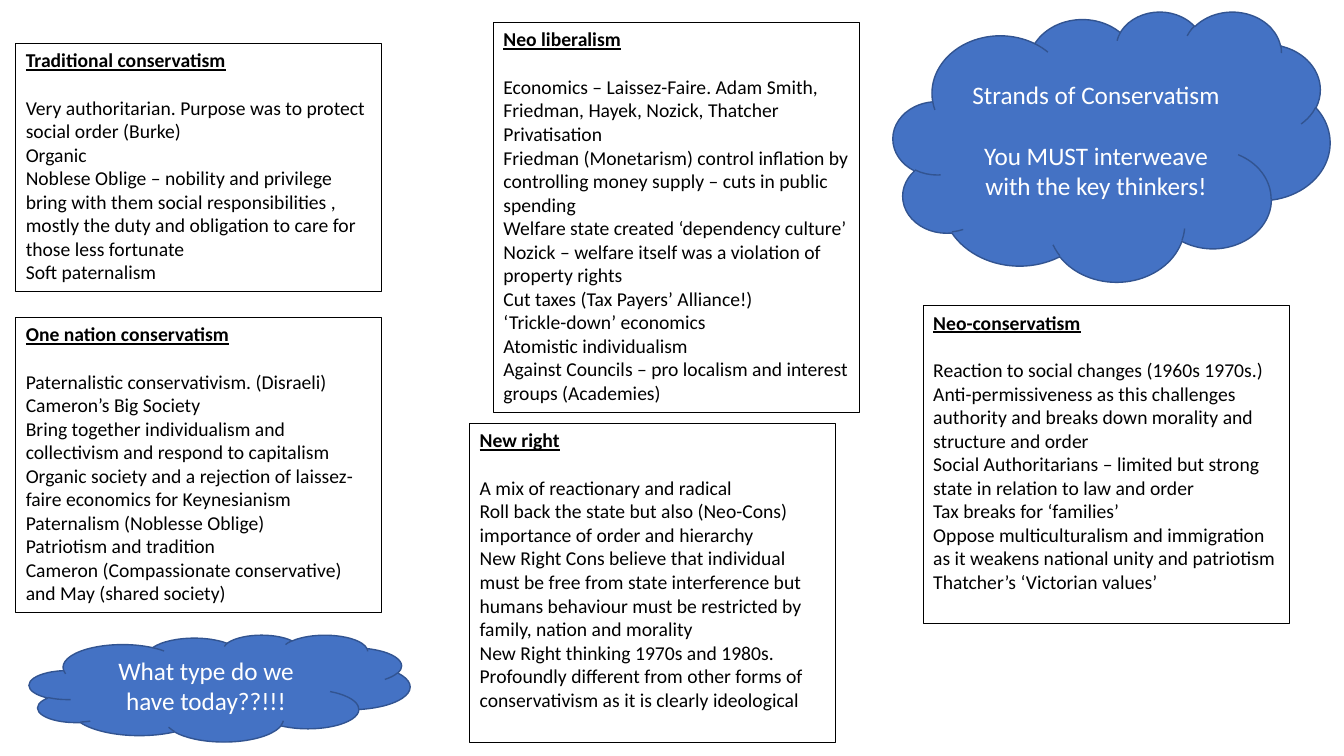
from pptx import Presentation
from pptx.dml.color import RGBColor
from pptx.enum.shapes import MSO_SHAPE
from pptx.enum.text import MSO_ANCHOR, PP_ALIGN
from pptx.util import Pt

CLOUD = MSO_SHAPE.CLOUD
TOP, MIDDLE = MSO_ANCHOR.TOP, MSO_ANCHOR.MIDDLE
LEFT, CENTER = PP_ALIGN.LEFT, PP_ALIGN.CENTER

FONT = "Calibri"
BLACK, WHITE, BLUE, DARK_BLUE = "000000", "FFFFFF", "4472C4", "325491"
STRAND_WIDTH = 261.5
STRAND_SIZE, CLOUD_SIZE = 14, 18
LINE_HEIGHT = 1.22  # one Calibri line, as a multiple of the font size

# Each strand: (left, top, height), heading, points
STRANDS = [
    ((11.3, 30.8, 177.3), "Traditional conservatism", [
        "Very authoritarian. Purpose was to protect social order (Burke)",
        "Organic",
        "Noblese Oblige – nobility and privilege bring with them social responsibilities , "
        "mostly the duty and obligation to care for those less fortunate",
        "Soft paternalism",
    ]),
    ((11.3, 226.5, 211), "One nation conservatism", [
        "Paternalistic conservativism. (Disraeli)",
        "Cameron’s Big Society",
        "Bring together individualism and collectivism and respond to capitalism",
        "Organic society and a rejection of laissez-faire economics for Keynesianism",
        "Paternalism (Noblesse Oblige)",
        "Patriotism and tradition",
        "Cameron (Compassionate conservative) and May (shared society)",
    ]),
    ((335.5, 302.4, 227.7), "New right", [
        "A mix of reactionary and radical",
        "Roll back the state but also (Neo-Cons) importance of order and hierarchy",
        "New Right Cons believe that individual must be free from state interference "
        "but humans behaviour must be restricted by family, nation and morality",
        "New Right thinking 1970s and 1980s. Profoundly different from other forms of "
        "conservativism as it is clearly ideological",
    ]),
    ((352.5, 16, 278.5), "Neo liberalism", [
        "Economics – Laissez-Faire. Adam Smith, Friedman, Hayek, Nozick, Thatcher",
        "Privatisation",
        "Friedman (Monetarism) control inflation by controlling money supply – "
        "cuts in public spending",
        "Welfare state created ‘dependency culture’",
        "Nozick – welfare itself was a violation of property rights",
        "Cut taxes (Tax Payers’ Alliance!)",
        "‘Trickle-down’ economics",
        "Atomistic individualism",
        "Against Councils – pro localism and interest groups (Academies)",
    ]),
    ((659.5, 218.2, 227.5), "Neo-conservatism", [
        "Reaction to social changes (1960s 1970s.)",
        "Anti-permissiveness as this challenges authority and breaks down morality "
        "and structure and order",
        "Social Authoritarians – limited but strong state in relation to law and order",
        "Tax breaks for ‘families’",
        "Oppose multiculturalism and immigration as it weakens national unity and patriotism",
        "Thatcher’s ‘Victorian values’",
    ]),
]

# Each cloud: (left, top, width, height), lines
CLOUDS = [
    ((638, 8, 312, 193),
     ["Strands of Conservatism", "You MUST interweave with the key thinkers!"]),
    ((20.9, 453.5, 272, 76.3), ["What type do we have today??!!!"]),
]


def color(hex_string):
    return RGBColor.from_string(hex_string)


def outline(shape, hex_string, width):
    shape.line.color.rgb = color(hex_string)
    shape.line.width = Pt(width)


def write(shape, lines, size, hex_string, align, anchor, has_heading):
    """Fill the shape with paragraphs, leaving a one-line gap after the first of several."""
    frame = shape.text_frame
    frame.word_wrap = True
    frame.vertical_anchor = anchor
    for index, line in enumerate(lines):
        para = frame.paragraphs[0] if index == 0 else frame.add_paragraph()
        para.alignment = align
        if index == 0 and len(lines) > 1:
            para.space_after = Pt(round(size * LINE_HEIGHT, 1))
        span = para.add_run()
        span.text = line
        span.font.name = FONT
        span.font.size = Pt(size)
        span.font.color.rgb = color(hex_string)
        if has_heading and index == 0:
            span.font.bold = span.font.underline = True


def add_strand(page, place, heading, points):
    left, top, height = place
    box = page.shapes.add_textbox(Pt(left), Pt(top), Pt(STRAND_WIDTH), Pt(height))
    outline(box, BLACK, 0.75)
    write(box, [heading, *points], STRAND_SIZE, BLACK, LEFT, TOP, True)


def add_cloud(page, place, lines):
    cloud = page.shapes.add_shape(CLOUD, *map(Pt, place))
    cloud.shadow.inherit = False
    cloud.fill.solid()
    cloud.fill.fore_color.rgb = color(BLUE)
    outline(cloud, DARK_BLUE, 1)
    write(cloud, lines, CLOUD_SIZE, WHITE, CENTER, MIDDLE, False)


def main():
    deck = Presentation()
    deck.slide_width, deck.slide_height = Pt(960), Pt(540)
    page = deck.slides.add_slide(deck.slide_layouts[6])
    for strand in STRANDS:
        add_strand(page, *strand)
    for cloud in CLOUDS:
        add_cloud(page, *cloud)
    deck.save("out.pptx")


if __name__ == "__main__":
    main()
